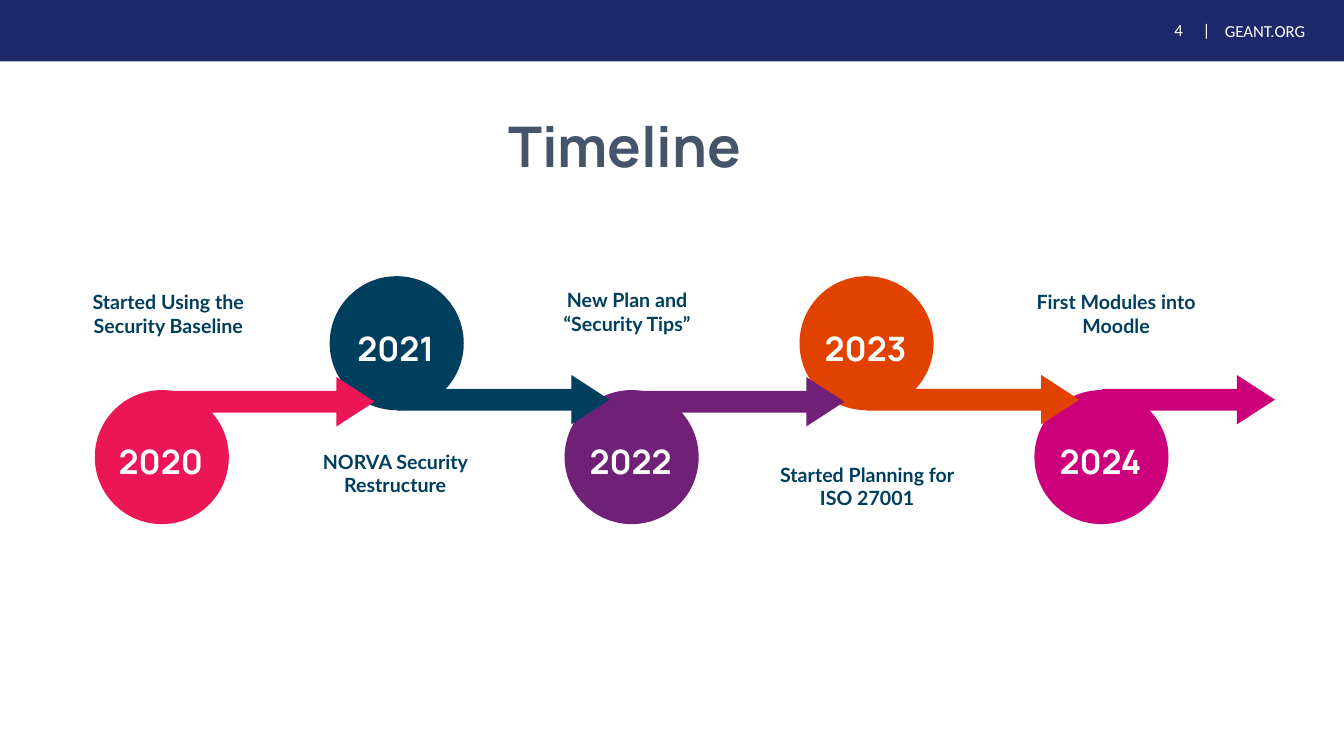
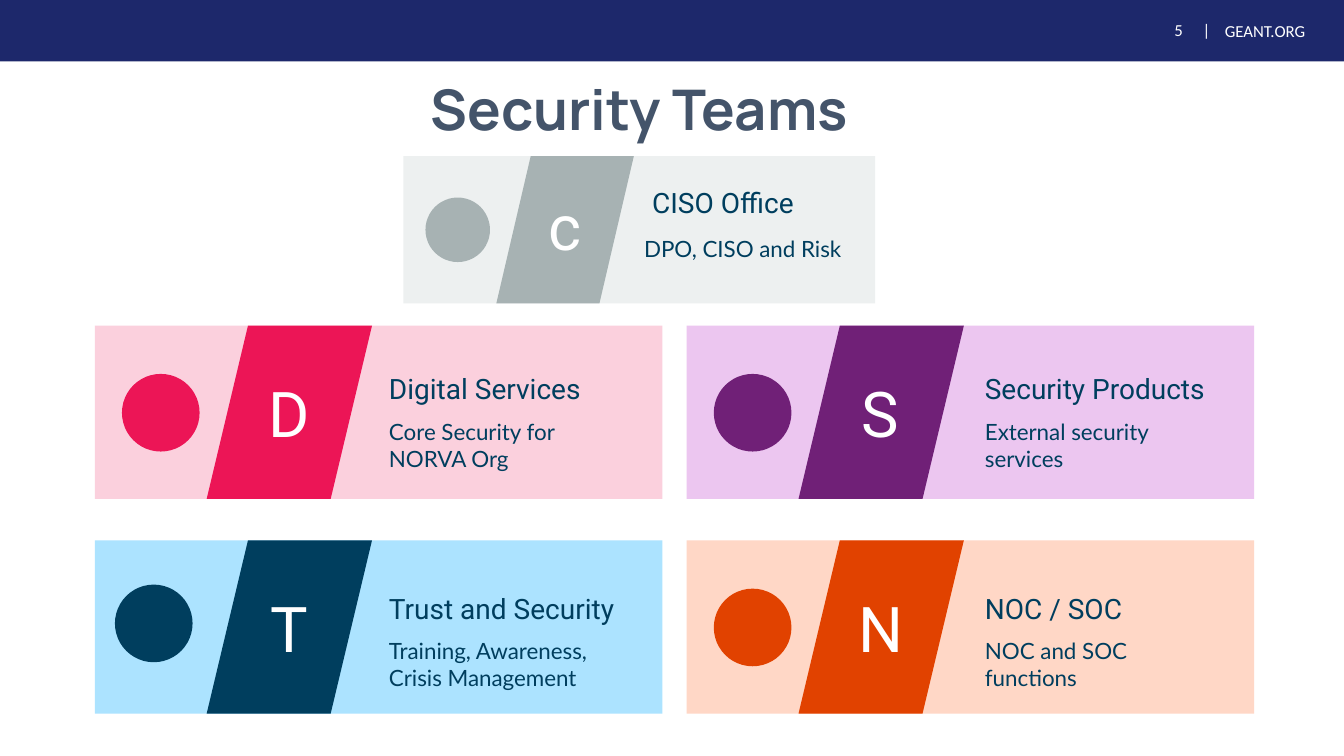
import dataclasses

import pptx
import pptx.dml.color
import pptx.enum.shapes
import pptx.enum.text
import pptx.util

Inches = pptx.util.Inches
Shapes = pptx.enum.shapes.MSO_SHAPE
Align = pptx.enum.text.PP_ALIGN
Anchor = pptx.enum.text.MSO_ANCHOR


@dataclasses.dataclass(frozen=True)
class TextStyle:
    font: str
    size: int
    color: str
    bold: bool = False
    align: Align = Align.LEFT


@dataclasses.dataclass(frozen=True)
class Theme:
    band: str = "1D286B"
    pink: str = "EC1556"
    navy: str = "003E5E"
    purple: str = "702077"
    orange: str = "E14200"
    magenta: str = "CC007B"
    grey: str = "A7B2B3"
    pale_pink: str = "FBD0DD"
    pale_blue: str = "ACE3FF"
    pale_purple: str = "ECC6F0"
    pale_orange: str = "FFD7C6"
    pale_grey: str = "EDF0F0"
    title: TextStyle = TextStyle("Manrope", 40, "44546A", True, Align.CENTER)
    header: TextStyle = TextStyle("Calibri", 12, "FFFFFF")
    header_number: TextStyle = TextStyle("Calibri", 12, "FFFFFF", align=Align.RIGHT)
    year: TextStyle = TextStyle("Manrope", 24, "FFFFFF", True, Align.CENTER)
    event: TextStyle = TextStyle("Lato", 14, "003E5E", True, Align.CENTER)
    letter: TextStyle = TextStyle("Roboto", 45, "FFFFFF", align=Align.CENTER)
    card_title: TextStyle = TextStyle("Roboto", 20, "003E5E")
    card_body: TextStyle = TextStyle("Lato", 16, "003E5E")


THEME = Theme()
WIDTH, HEIGHT = 13.33, 7.5


@dataclasses.dataclass(frozen=True)
class Milestone:
    year: str
    event: str
    color: str
    label_left: float
    label_top: float


@dataclasses.dataclass(frozen=True)
class Card:
    box: tuple  # left, top, width, height
    color: str
    background: str
    letter: str
    title: str
    body: str
    title_at: tuple  # offsets from the card corner
    body_at: tuple
    dot_at: tuple = (0.27, 0.48)
    letter_top: float = 0.44


MILESTONES = [
    Milestone("2020", "Started Using the Security Baseline", THEME.pink, 0.61, 2.83),
    Milestone("2021", "NORVA Security Restructure", THEME.navy, 2.86, 4.41),
    Milestone("2022", "New Plan and “Security Tips”", THEME.purple, 5.16, 2.81),
    Milestone("2023", "Started Planning for ISO 27001", THEME.orange, 7.54, 4.54),
    Milestone("2024", "First Modules into Moodle", THEME.magenta, 10.01, 2.83),
]

CARD_WIDTH, CARD_HEIGHT = 5.63, 1.72
LEFT_COLUMN, RIGHT_COLUMN = 0.94, 6.81
UPPER_ROW, LOWER_ROW = 3.23, 5.36


def grid_box(left, top):
    return left, top, CARD_WIDTH, CARD_HEIGHT


CARDS = [
    Card((4, 1.55, 4.68, 1.46), THEME.grey, THEME.pale_grey, "c",
         "CISO Office", "DPO, CISO and Risk",
         (2.37, 0.24), (2.29, 0.73), (0.22, 0.41), 0.26),
    Card(grid_box(LEFT_COLUMN, UPPER_ROW), THEME.pink, THEME.pale_pink, "D",
         "Digital Services", "Core Security for NORVA Org",
         (2.82, 0.41), (2.82, 0.87)),
    Card(grid_box(RIGHT_COLUMN, UPPER_ROW), THEME.purple, THEME.pale_purple, "S",
         "Security Products", "External security services",
         (2.86, 0.41), (2.86, 0.87)),
    Card(grid_box(LEFT_COLUMN, LOWER_ROW), THEME.navy, THEME.pale_blue, "T",
         "Trust and Security", "Training, Awareness, Crisis Management",
         (2.82, 0.46), (2.82, 0.91), (0.2, 0.44)),
    Card(grid_box(RIGHT_COLUMN, LOWER_ROW), THEME.orange, THEME.pale_orange, "N",
         "NOC / SOC", "NOC and SOC functions",
         (2.86, 0.46), (2.86, 0.91)),
]


def rgb(color):
    return pptx.dml.color.RGBColor.from_string(color)


def write(frame, text, style, anchor=Anchor.TOP, wrap=True):
    frame.word_wrap = wrap
    frame.auto_size = pptx.enum.text.MSO_AUTO_SIZE.NONE
    frame.vertical_anchor = anchor
    paragraph = frame.paragraphs[0]
    paragraph.alignment = style.align
    run = paragraph.add_run()
    run.text = text
    run.font.name = style.font
    run.font.size = pptx.util.Pt(style.size)
    run.font.bold = style.bold
    run.font.color.rgb = rgb(style.color)


def add_text(slide, box, text, style, anchor=Anchor.TOP):
    text_box = slide.shapes.add_textbox(*map(Inches, box))
    write(text_box.text_frame, text, style, anchor)
    return text_box


def add_block(slide, kind, box, color):
    shape = slide.shapes.add_shape(kind, *map(Inches, box))
    shape.shadow.inherit = False
    shape.fill.solid()
    shape.fill.fore_color.rgb = rgb(color)
    shape.line.fill.background()
    return shape


def move_header_to_layout(slide, layout):
    """Builds the shared header band and hands it to the layout."""
    parts = [
        add_block(slide, Shapes.RECTANGLE, (0, 0, WIDTH, 0.61), THEME.band),
        add_text(slide, (11.83, 0.12, 0.25, 0.36), "|", THEME.header, Anchor.MIDDLE),
        add_text(slide, (12.05, 0.15, 1.28, 0.32), "GEANT.ORG",
                 THEME.header, Anchor.MIDDLE),
    ]
    for part in parts:
        layout.shapes.element.append(part.element)


def add_titled_slide(presentation, layout, number, title, box):
    slide = presentation.slides.add_slide(layout)
    placeholder = slide.shapes.title
    placeholder.left, placeholder.top, placeholder.width, placeholder.height = map(
        Inches, box)
    write(placeholder.text_frame, title, THEME.title, wrap=False)
    add_text(slide, (11.33, 0.12, 0.5, 0.36), number,
             THEME.header_number, Anchor.MIDDLE)
    return slide


def draw_timeline(slide, left, top, milestones):
    pitch, diameter, drop = 2.33, 1.33, 1.13
    # Circles alternate below and above the line of arrows
    corners = [(left + index * pitch, top + (drop if index % 2 == 0 else 0))
               for index in range(len(milestones))]
    for milestone, (x, y) in zip(milestones, corners):
        add_block(slide, Shapes.OVAL, (x, y, diameter, diameter), milestone.color)

    # Arrows start at each circle's centre
    for index, (milestone, (x, y)) in enumerate(zip(milestones, corners)):
        last = index == len(milestones) - 1
        length = 1.72 if last else 2.11
        arrow_top = top + (1 if index % 2 == 0 and not last else 0.98)
        arrow = add_block(slide, Shapes.RIGHT_ARROW,
                          (x + diameter / 2, arrow_top, length, 0.49),
                          milestone.color)
        arrow.adjustments[0], arrow.adjustments[1] = 0.44, 0.77

    # Years and event labels
    for milestone, (x, y) in zip(milestones, corners):
        add_text(slide, (x + 0.04, y + 0.46, 1.23, 0.5), milestone.year, THEME.year)
        add_text(slide, (milestone.label_left, milestone.label_top, 2.12, 0.57),
                 milestone.event, THEME.event)


def draw_card(slide, card):
    left, top, width, height = card.box
    scale = width / CARD_WIDTH

    def place(offset, part_width, part_height):
        return left + offset[0], top + offset[1], part_width, part_height

    # Background, slanted panel and dot
    add_block(slide, Shapes.RECTANGLE, card.box, card.background)
    add_block(slide, Shapes.PARALLELOGRAM,
              place((1.11 * scale, 0), 1.64 * scale, height), card.color)
    add_block(slide, Shapes.OVAL,
              place(card.dot_at, 0.77 * scale, 0.77 * scale), card.color)
    # Letter, title and description
    add_text(slide, place((1.56 * scale, card.letter_top), 0.73 * scale, 0.86),
             card.letter, THEME.letter)
    add_text(slide, place(card.title_at, 2.56, 0.44), card.title, THEME.card_title)
    add_text(slide, place(card.body_at, 2.27, 0.64), card.body, THEME.card_body)


def main():
    presentation = pptx.Presentation()
    presentation.slide_width = Inches(WIDTH)
    presentation.slide_height = Inches(HEIGHT)
    layout = presentation.slide_layouts.get_by_name("Title Only")

    timeline = add_titled_slide(presentation, layout, "4", "Timeline",
                                (4.85, 1.06, 2.69, 0.77))
    move_header_to_layout(timeline, layout)
    draw_timeline(timeline, 0.94, 2.74, MILESTONES)

    teams = add_titled_slide(presentation, layout, "5", "Security Teams",
                             (4, 0.69, 4.68, 0.77))
    for card in CARDS:
        draw_card(teams, card)

    presentation.save("out.pptx")


if __name__ == "__main__":
    main()
